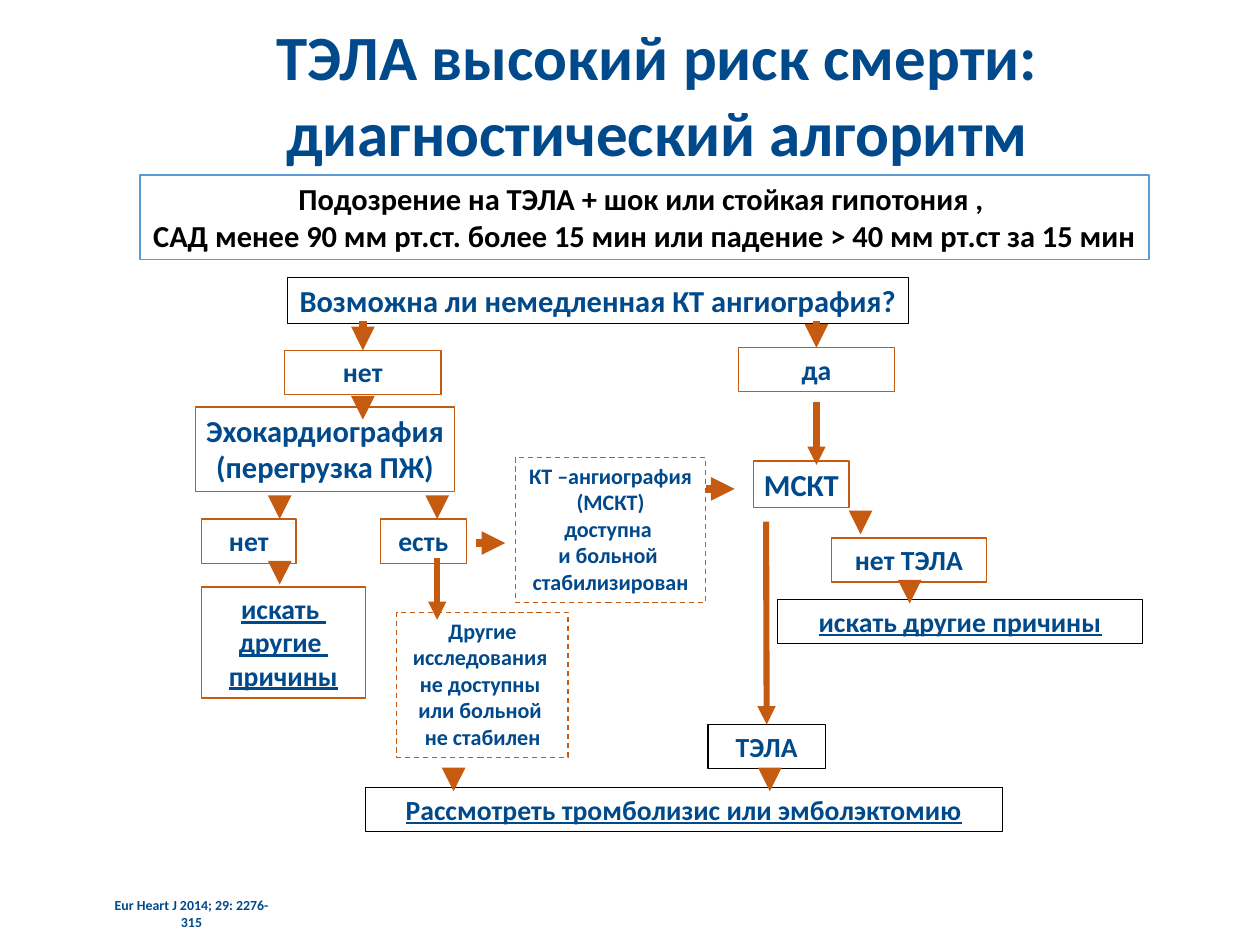
from lxml.etree import SubElement
from pptx import Presentation
from pptx.dml.color import RGBColor
from pptx.enum.dml import MSO_LINE
from pptx.enum.shapes import MSO_CONNECTOR, MSO_SHAPE
from pptx.enum.text import MSO_ANCHOR, MSO_AUTO_SIZE, PP_ALIGN
from pptx.oxml.ns import qn
from pptx.util import Inches, Pt

COLORS = {
    "navy": "00498B",
    "orange": "C55A11",
    "blue": "5B9BD5",
    "black": "000000",
    "white": "FFFFFF",
}
FONT = "Calibri"
LARGE, MEDIUM, SMALL = 17.4, 15.8, 12.6
TOP, BOTTOM = 0, 2

# name: (left, top, width, height, lines, size, border, further options)
BOXES = {
    "suspicion": (1.11, 1.39, 8.01, 0.67,
                  ["Подозрение на ТЭЛА + шок или стойкая гипотония , ",
                   "САД менее 90 мм рт.ст. более 15 мин или падение > 40 мм рт.ст за 15 мин"],
                  LARGE, "blue",
                  {"color": "black", "fill": "white", "weight": 1, "wrap": False}),
    "question": (2.28, 2.2, 4.93, 0.37, ["Возможна ли немедленная КТ ангиография?"],
                 LARGE, "black", {"wrap": False}),
    "ct_no": (2.26, 2.78, 1.24, 0.35, ["нет"], MEDIUM, "orange", {}),
    "ct_yes": (5.86, 2.76, 1.24, 0.35, ["да"], MEDIUM, "orange", {}),
    "echo": (1.55, 3.23, 2.06, 0.67, ["Эхокардиография", "(перегрузка ПЖ)"],
             LARGE, "orange", {"wrap": False}),
    "msct": (5.98, 3.66, 0.76, 0.37, ["МСКТ"], LARGE, "orange", {"wrap": False}),
    "overload_no": (1.6, 4.12, 0.75, 0.35, ["нет"], MEDIUM, "orange", {}),
    "overload_yes": (3.02, 4.12, 0.68, 0.35, ["есть"], MEDIUM, "orange", {}),
    "ct_available": (4.09, 3.63, 1.51, 1.15,
                     ["КТ –ангиография (МСКТ)", "доступна ", "и больной ", "стабилизирован"],
                     SMALL, "orange", {"dashed": True}),
    "unavailable": (3.15, 4.86, 1.36, 1.15,
                    ["Другие", "исследования ", "не доступны ", "или больной ", "не стабилен"],
                    SMALL, "orange", {"dashed": True}),
    "causes_left": (1.6, 4.66, 1.3, 0.88, ["искать ", "другие ", "причины"],
                    MEDIUM, "orange", {"underline": True}),
    "no_embolism": (6.6, 4.27, 1.23, 0.35, ["нет ТЭЛА"], MEDIUM, "orange",
                    {"fill": "white"}),
    "causes_right": (6.17, 4.76, 2.9, 0.35, ["искать другие причины"],
                     MEDIUM, "black", {"underline": True}),
    "embolism": (5.62, 5.75, 0.93, 0.35, ["ТЭЛА"], MEDIUM, "black", {"fill": "white"}),
    "treatment": (2.9, 6.25, 5.06, 0.35, ["Рассмотреть тромболизис или эмболэктомию"],
                  MEDIUM, "black", {"underline": True}),
}

# Short downward arrows: x, start y
SHORT_ARROWS = [(2.88, 3.21), (2.22, 4), (3.47, 4), (2.22, 4.52), (6.83, 4.12),
                (7.22, 4.67), (3.6, 6.16), (6.11, 6.16)]
SHORT_LENGTH = 0.12

# Arrows to the right: x, y
SIDE_ARROWS = [(5.6, 3.88), (3.78, 4.31)]
SIDE_LENGTH = 0.23


def rgb(name):
    return RGBColor.from_string(COLORS[name])


def write_text(shape, lines, size, color="navy", wrap=True, underline=False,
               inset=0.08):
    """Fill a shape with centred bold paragraphs."""
    frame = shape.text_frame
    frame.text = "\n".join(lines)
    frame.word_wrap = wrap
    frame.auto_size = MSO_AUTO_SIZE.SHAPE_TO_FIT_TEXT
    frame.vertical_anchor = MSO_ANCHOR.TOP
    frame.margin_left = frame.margin_right = Inches(inset)
    frame.margin_top = frame.margin_bottom = Inches(0.04)
    for paragraph in frame.paragraphs:
        paragraph.alignment = PP_ALIGN.CENTER
        for run in paragraph.runs:
            run.font.name = FONT
            run.font.size = Pt(size)
            run.font.bold = True
            run.font.underline = underline
            run.font.color.rgb = rgb(color)


def add_label(slide, left, top, width, height, text, size, inset=0.08):
    label = slide.shapes.add_textbox(Inches(left), Inches(top),
                                     Inches(width), Inches(height))
    write_text(label, [text], size, inset=inset)


def add_box(slide, left, top, width, height, lines, size, border,
            fill=None, weight=0.75, dashed=False, **text_options):
    box = slide.shapes.add_shape(MSO_SHAPE.RECTANGLE, Inches(left), Inches(top),
                                 Inches(width), Inches(height))
    box.shadow.inherit = False
    if fill:
        box.fill.solid()
        box.fill.fore_color.rgb = rgb(fill)
    else:
        box.fill.background()
    box.line.color.rgb = rgb(border)
    box.line.width = Pt(weight)
    if dashed:
        box.line.dash_style = MSO_LINE.DASH
    write_text(box, lines, size, **text_options)
    return box


def add_arrow(slide, start, end, weight=4.5, target=None):
    """Draw an arrow; a target box takes its tip at the middle of the top side."""
    arrow = slide.shapes.add_connector(MSO_CONNECTOR.STRAIGHT,
                                       *(Inches(value) for value in start + end))
    arrow.line.color.rgb = rgb("orange")
    arrow.line.width = Pt(weight)
    SubElement(arrow.line._get_or_add_ln(), qn("a:tailEnd"), type="triangle")
    SubElement(arrow._element.spPr, qn("a:effectLst"))
    if target is not None:
        arrow.end_connect(target, TOP)


def main():
    presentation = Presentation()
    presentation.slide_width = Inches(10)
    presentation.slide_height = Inches(7.5)
    slide = presentation.slides.add_slide(presentation.slide_layouts[6])

    # Title
    add_label(slide, 0.4, 0.1, 9.63, 1.29,
              "ТЭЛА высокий риск смерти: диагностический алгоритм", 36)

    # Flowchart boxes
    boxes = {}
    for name, (*values, options) in BOXES.items():
        boxes[name] = add_box(slide, *values, **options)

    # Arrows joined to the box they lead to
    add_arrow(slide, (2.88, 2.55), (2.88, 2.78), target=boxes["ct_no"])
    add_arrow(slide, (6.48, 2.55), (6.48, 2.76), target=boxes["ct_yes"])
    add_arrow(slide, (6.08, 4.14), (6.08, 5.75), 3.5, boxes["embolism"])

    # Free arrows
    add_arrow(slide, (6.48, 3.19), (6.48, 3.69), 3.5)
    add_arrow(slide, (3.47, 4.43), (3.47, 4.92), 3.5)
    for x, y in SHORT_ARROWS:
        add_arrow(slide, (x, y), (x, y + SHORT_LENGTH))
    for x, y in SIDE_ARROWS:
        add_arrow(slide, (x, y), (x + SIDE_LENGTH, y))

    # Reference
    add_label(slide, 0.73, 7.08, 1.58, 0.23, "Eur Heart J 2014; 29: 2276-315", 7.9,
              inset=0.12)

    presentation.save("out.pptx")


if __name__ == "__main__":
    main()
